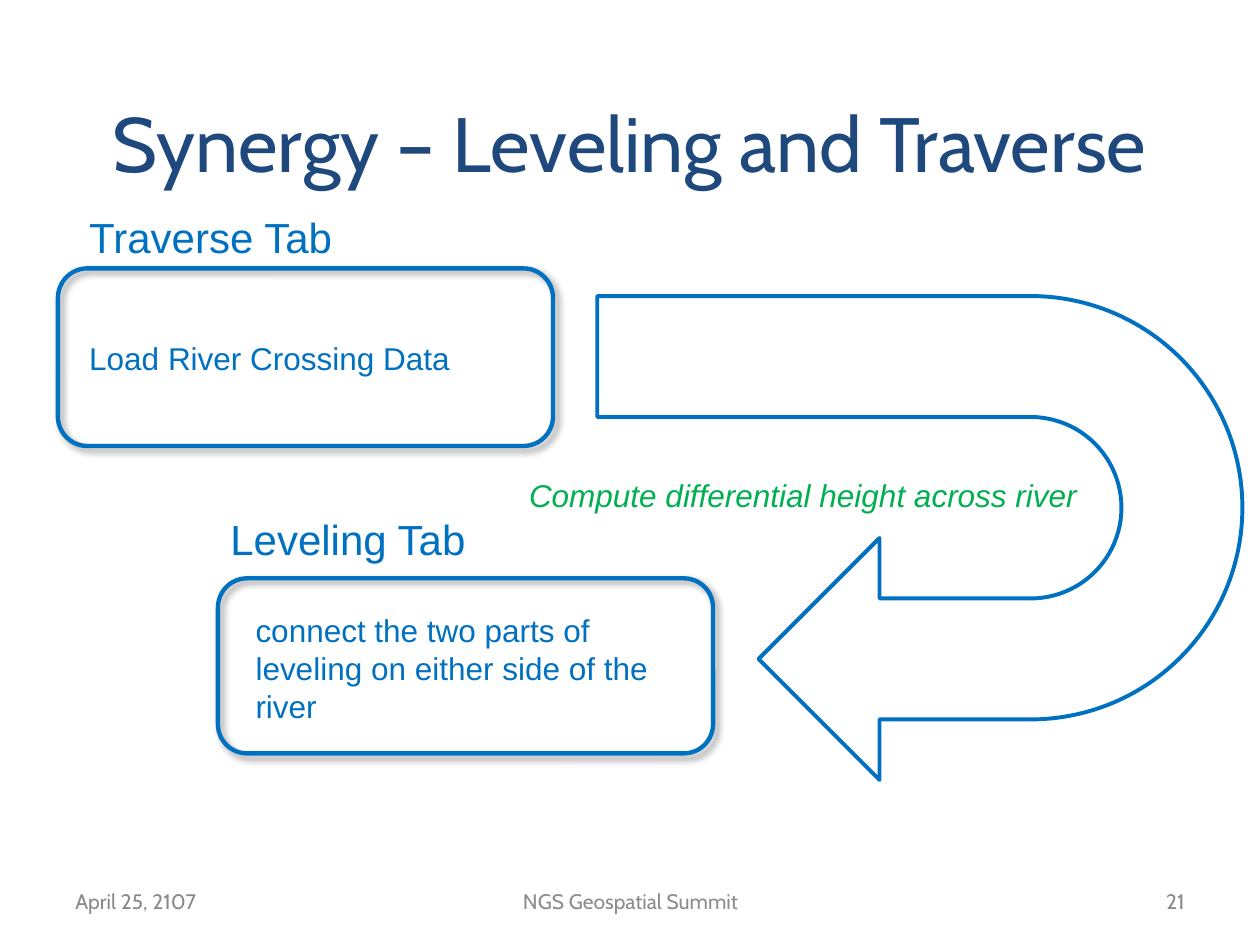
import lxml.etree
import pptx
import pptx.dml.color
import pptx.enum.shapes
import pptx.enum.text
import pptx.oxml.ns
import pptx.util

WIDE = pptx.util.Inches(10)
HIGH = pptx.util.Inches(7.5)
HUES = {"title": "1F497D", "main": "0070C0", "note": "00B050",
        "foot": "898989", "mid": "8C8C8C", "shade": "000000"}
ALIGN = pptx.enum.text.PP_ALIGN
ANCHOR = pptx.enum.text.MSO_ANCHOR
KIND = pptx.enum.shapes.MSO_SHAPE


def hue(key):
    return pptx.dml.color.RGBColor.from_string(HUES[key])


def scale(left, top, width, height):
    return [round(share * side / 100) for share, side in
            zip((left, top, width, height), (WIDE, HIGH, WIDE, HIGH))]


def write(frame, text, size, key, face="Arial", align=ALIGN.LEFT,
          anchor=ANCHOR.TOP, slant=False):
    frame.word_wrap = True
    frame.vertical_anchor = anchor
    frame.text = text
    para = frame.paragraphs[0]
    para.alignment = align
    font = para.font
    font.name, font.size = face, pptx.util.Pt(size)
    font.color.rgb = hue(key)
    font.italic = slant


def add_title(slide, text):
    title = slide.shapes.title
    title.left, title.top, title.width, title.height = scale(5, 6.67, 90, 16.67)
    write(title.text_frame, text, 44, "title", "Cabin",
          ALIGN.CENTER, ANCHOR.MIDDLE)


def add_text(slide, area, text, size, key="main", **style):
    box = slide.shapes.add_textbox(*scale(*area))
    write(box.text_frame, text, size, key, **style)


def add_foot(slide, left, width, text, key, align):
    add_text(slide, (left, 92.67, width, 5.33), text, 12, key,
             face="Cabin", align=align, anchor=ANCHOR.MIDDLE)


def add_shape(slide, kind, area, weight):
    shape = slide.shapes.add_shape(kind, *scale(*area))
    shape.shadow.inherit = False
    shape.fill.background()
    shape.line.color.rgb = hue("main")
    shape.line.width = pptx.util.Pt(weight)
    return shape


def add_shade(shape):
    name = pptx.oxml.ns.qn
    root = shape.element.spPr.find(name("a:effectLst"))
    shade = lxml.etree.SubElement(
        root, name("a:outerShdw"), blurRad=str(pptx.util.Pt(4)),
        dist=str(pptx.util.Pt(3)), dir=str(45 * 60000),
        algn="tl", rotWithShape="0")
    color = lxml.etree.SubElement(shade, name("a:srgbClr"), val=HUES["shade"])
    lxml.etree.SubElement(color, name("a:alpha"), val="40000")


def add_card(slide, area):
    add_shade(add_shape(slide, KIND.ROUNDED_RECTANGLE, area, 2.5))


def add_turn(slide, area):
    add_shape(slide, KIND.U_TURN_ARROW, area, 2.25).rotation = 90


def main():
    deck = pptx.Presentation()
    deck.slide_width, deck.slide_height = WIDE, HIGH
    slide = deck.slides.add_slide(deck.slide_layouts.get_by_name("Title Only"))

    add_title(slide, "Synergy – Leveling and Traverse")
    add_foot(slide, 5, 23.3, "April 25, 2107", "foot", ALIGN.LEFT)
    add_foot(slide, 34.2, 31.7, "NGS Geospatial Summit", "mid", ALIGN.CENTER)
    add_foot(slide, 71.7, 23.3, "21", "foot", ALIGN.RIGHT)

    add_card(slide, (4.6, 28.4, 39.3, 18.8))
    add_card(slide, (17.3, 61.2, 39.3, 18.53))
    add_text(slide, (6.1, 35.2, 35.4, 5.33), "Load River Crossing Data", 18)
    add_text(slide, (41, 49.73, 46.1, 5.33),
             "Compute differential height across river", 18, "note", slant=True)
    add_text(slide, (6.1, 21.73, 23.2, 6.67), "Traverse Tab", 24)
    add_text(slide, (17.3, 53.73, 23.1, 6.67), "Leveling Tab", 24)
    add_turn(slide, (53.8, 22.8, 38.4, 68.27))
    add_text(slide, (19.3, 64, 35.4, 13.47),
             "connect the two parts of leveling on either side of the river", 18)

    deck.save("out.pptx")


if __name__ == "__main__":
    main()
